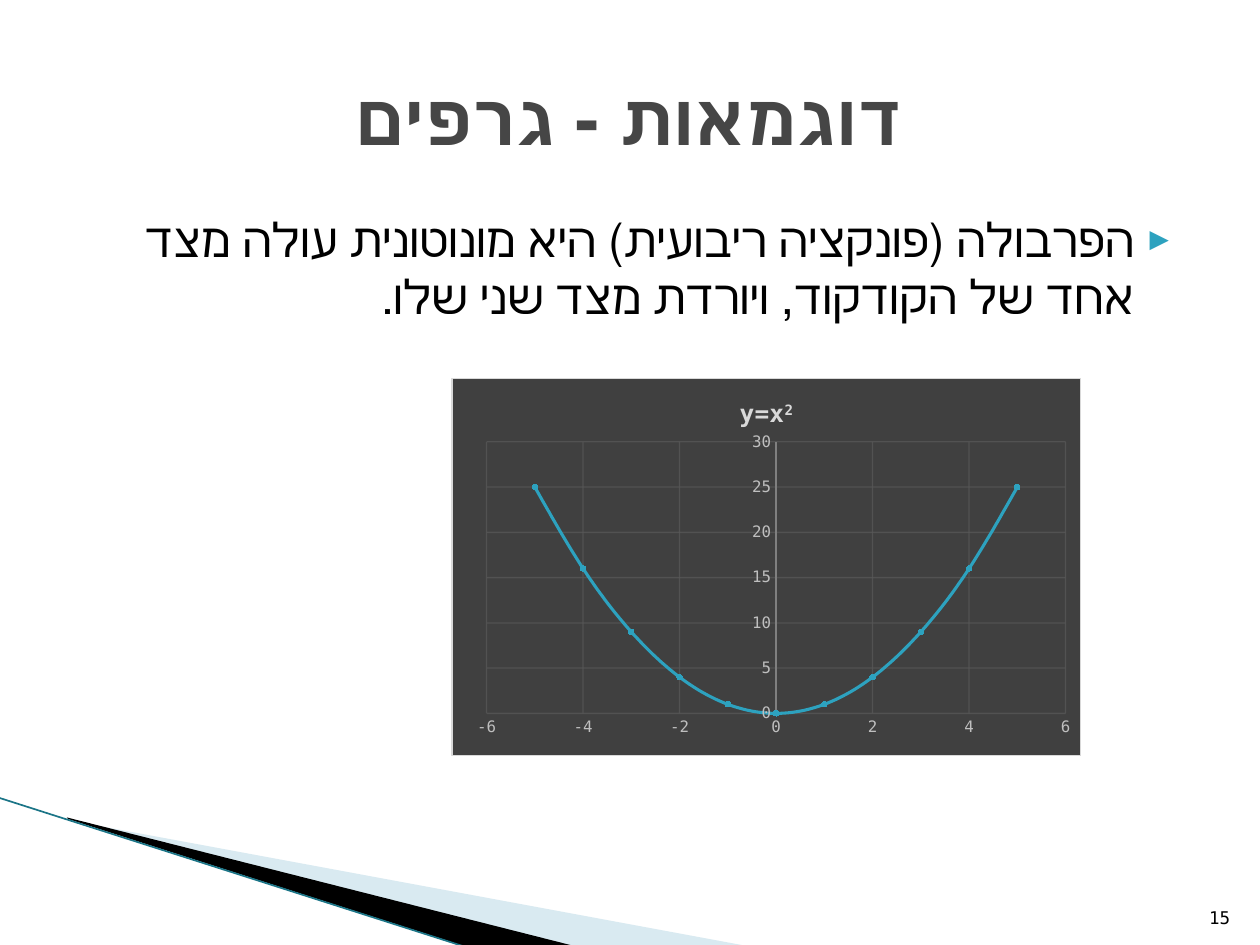
from lxml.etree import SubElement
from pptx import Presentation
from pptx.chart.data import XyChartData
from pptx.dml.color import RGBColor
from pptx.enum.chart import XL_CHART_TYPE as ChartType, XL_MARKER_STYLE as Marker, XL_TICK_MARK as Tick
from pptx.enum.shapes import MSO_CONNECTOR as Connector
from pptx.enum.text import MSO_ANCHOR as Anchor, MSO_AUTO_SIZE as AutoSize, PP_ALIGN as Align
from pptx.oxml import parse_xml
from pptx.oxml.ns import nsdecls, qn
from pptx.util import Cm, Pt

TITLE = "דוגמאות - גרפים"
STATEMENT = "הפרבולה (פונקציה ריבועית) היא מונוטונית עולה מצד אחד של הקודקוד, ויורדת מצד שני שלו."
PAGE_NUMBER = "15"
FUNCTION, EXPONENT = "y=x", "2"
X_VALUES = range(-5, 6)
X_SCALE, Y_SCALE = (-6, 6, 2), (0, 30, 5)
PLOT_AREA = {"x": 0.055, "y": 0.168, "w": 0.921, "h": 0.721}

# left, top, width, height in cm
TITLE_BOX = (1.27, 0.76, 22.86, 3.18)
STATEMENT_BOX = (1.27, 4.11, 22.86, 12.57)
CHART_BOX = (9.1, 7.62, 12.7, 7.62)
NUMBER_BOX = (24.03, 17.81, 1.02, 1.02)

# corner points in cm, fill colour, opacity in percent
WEDGES = [
    ([(1.4, 16.54), (15.11, 19.08), (11.58, 19.08), (1.4, 16.51)], "pale", 40),
    ([(1.35, 16.48), (11.61, 19.08), (9.45, 19.1), (1.37, 16.51)], "black", 100),
]
EDGE = (-0.03, 16.08, 9.42, 19.1)

THEME = {
    "font": "DejaVu Sans Mono",
    "colours": {
        "black": "000000", "title": "464646", "accent": "2DA2BF", "pale": "A0CBDC",
        "edge": "1B7587", "chart": "404040", "border": "D9D9D9", "label": "BFBFBF",
        "axis": "808080", "grid": "595959", "marker": "7ACBE0",
    },
    "sizes": {"title": 41, "body": 27, "chart title": 14, "chart": 10, "axis": 9, "number": 10},
}


def colour(name):
    return RGBColor.from_string(THEME["colours"][name])


def box(lengths):
    return [Cm(length) for length in lengths]


def style_font(font, size, ink, bold=False):
    font.name, font.size, font.bold = THEME["font"], Pt(THEME["sizes"][size]), bold
    font.color.rgb = colour(ink)


def write(frame, text, size, ink="black", bold=False, align=None, anchor=None,
          rtl=False, bullet=None, superscript=""):
    if anchor is not None:
        frame.vertical_anchor = anchor
    paragraph = frame.paragraphs[0]
    paragraph.space_before = Pt(0)
    if align is not None:
        paragraph.alignment = align
    if rtl:
        paragraph._p.get_or_add_pPr().set("rtl", "1")
    if bullet:
        add_bullet(paragraph, bullet)
    for part in filter(None, (text, superscript)):
        run = paragraph.add_run()
        run.text = part
        style_font(run.font, size, ink, bold)
        if part == superscript:
            run._r.get_or_add_rPr().set("baseline", "30000")


def add_bullet(paragraph, character):
    properties = paragraph._p.get_or_add_pPr()
    properties.set("marL", str(Cm(1.02)))
    properties.set("indent", str(Cm(-0.71)))
    ink = SubElement(properties, qn("a:buClr"))
    SubElement(ink, qn("a:srgbClr"), val=THEME["colours"]["accent"])
    SubElement(properties, qn("a:buSzPct"), val="68000")
    SubElement(properties, qn("a:buFont"), typeface=THEME["font"])
    SubElement(properties, qn("a:buChar"), char=character)


def set_opacity(fill_parent, percent):
    for rgb in fill_parent.iter(qn("a:srgbClr")):
        SubElement(rgb, qn("a:alpha"), val=str(percent * 1000))


def style_line(line, ink, width):
    line.color.rgb = colour(ink)
    line.width = Pt(width)


def add_wedges(shapes):
    for corners, ink, opacity in WEDGES:
        start, *others = [box(corner) for corner in corners]
        builder = shapes.build_freeform(*start)
        builder.add_line_segments(others, close=True)
        wedge = builder.convert_to_shape()
        wedge.shadow.inherit = False
        wedge.fill.solid()
        wedge.fill.fore_color.rgb = colour(ink)
        wedge.line.fill.background()
        if opacity < 100:
            set_opacity(wedge._element.spPr, opacity)
    edge = shapes.add_connector(Connector.STRAIGHT, *box(EDGE))
    style_line(edge.line, "edge", 0.95)
    SubElement(edge._element.spPr, qn("a:effectLst"))


def style_axis(axis, scale):
    axis.minimum_scale, axis.maximum_scale, axis.major_unit = scale
    axis.major_tick_mark = axis.minor_tick_mark = Tick.NONE
    axis.has_major_gridlines = True
    grid = axis.major_gridlines
    style_line(grid.format.line, "grid", 0.75)
    set_opacity(axis._element.find(qn("c:majorGridlines")), 75)
    style_font(axis.tick_labels.font, "axis", "label")


def style_frame(chart):
    """Give the chart its background, border and plot area position."""
    colours = THEME["colours"]
    space = chart._chartSpace
    space.find(qn("c:chart")).addnext(parse_xml(
        f'<c:spPr {nsdecls("c", "a")}>'
        f'<a:solidFill><a:srgbClr val="{colours["chart"]}"/></a:solidFill>'
        f'<a:ln w="{Pt(0.75)}"><a:solidFill><a:srgbClr val="{colours["border"]}"/>'
        '</a:solidFill></a:ln></c:spPr>'))
    plot_area = space.find(".//" + qn("c:plotArea"))
    for old in plot_area.findall(qn("c:layout")):
        plot_area.remove(old)
    places = "".join(f'<c:{key} val="{value}"/>' for key, value in PLOT_AREA.items())
    plot_area.insert(0, parse_xml(
        f'<c:layout {nsdecls("c")}><c:manualLayout><c:layoutTarget val="inner"/>'
        f'<c:xMode val="edge"/><c:yMode val="edge"/>{places}</c:manualLayout></c:layout>'))


def smooth_curve(curve):
    element = curve._element
    for old in element.findall(qn("c:smooth")):
        element.remove(old)
    SubElement(element, qn("c:smooth"), val="1")


def add_parabola(shapes):
    data = XyChartData()
    points = data.add_series(FUNCTION + EXPONENT)
    for x in X_VALUES:
        points.add_data_point(x, x ** 2)
    chart = shapes.add_chart(ChartType.XY_SCATTER_SMOOTH, *box(CHART_BOX), data).chart
    style_font(chart.font, "chart", "black")
    chart.has_legend = False
    chart.has_title = True
    write(chart.chart_title.text_frame, FUNCTION, "chart title", "border",
          bold=True, superscript=EXPONENT)
    chart.chart_title.include_in_layout = False
    style_axis(chart.category_axis, X_SCALE)
    chart.category_axis.format.line.fill.background()
    style_axis(chart.value_axis, Y_SCALE)
    style_line(chart.value_axis.format.line, "axis", 0.75)
    plot = chart.plots[0]
    plot.vary_by_categories = False
    curve = plot.series[0]
    style_line(curve.format.line, "accent", 1.75)
    curve.marker.style, curve.marker.size = Marker.CIRCLE, 3
    curve.marker.format.fill.solid()
    curve.marker.format.fill.fore_color.rgb = colour("marker")
    style_line(curve.marker.format.line, "accent", 0.75)
    smooth_curve(curve)
    style_frame(chart)


def place(shape, lengths):
    shape.left, shape.top, shape.width, shape.height = box(lengths)
    shape.text_frame.word_wrap = True
    shape.text_frame.auto_size = AutoSize.NONE
    return shape.text_frame


def main():
    deck = Presentation()
    deck.slide_width, deck.slide_height = Cm(25.4), Cm(19.05)
    slide = deck.slides.add_slide(deck.slide_layouts[1])
    shapes = slide.shapes
    add_wedges(shapes)
    write(place(shapes.title, TITLE_BOX), TITLE, "title", "title", bold=True,
          align=Align.CENTER, anchor=Anchor.MIDDLE)
    write(place(slide.placeholders[1], STATEMENT_BOX), STATEMENT, "body",
          align=Align.RIGHT, anchor=Anchor.TOP, rtl=True, bullet="▶")
    add_parabola(shapes)
    number = place(shapes.add_textbox(*box(NUMBER_BOX)), NUMBER_BOX)
    write(number, PAGE_NUMBER, "number", align=Align.RIGHT, anchor=Anchor.BOTTOM)
    deck.save("out.pptx")


if __name__ == "__main__":
    main()
